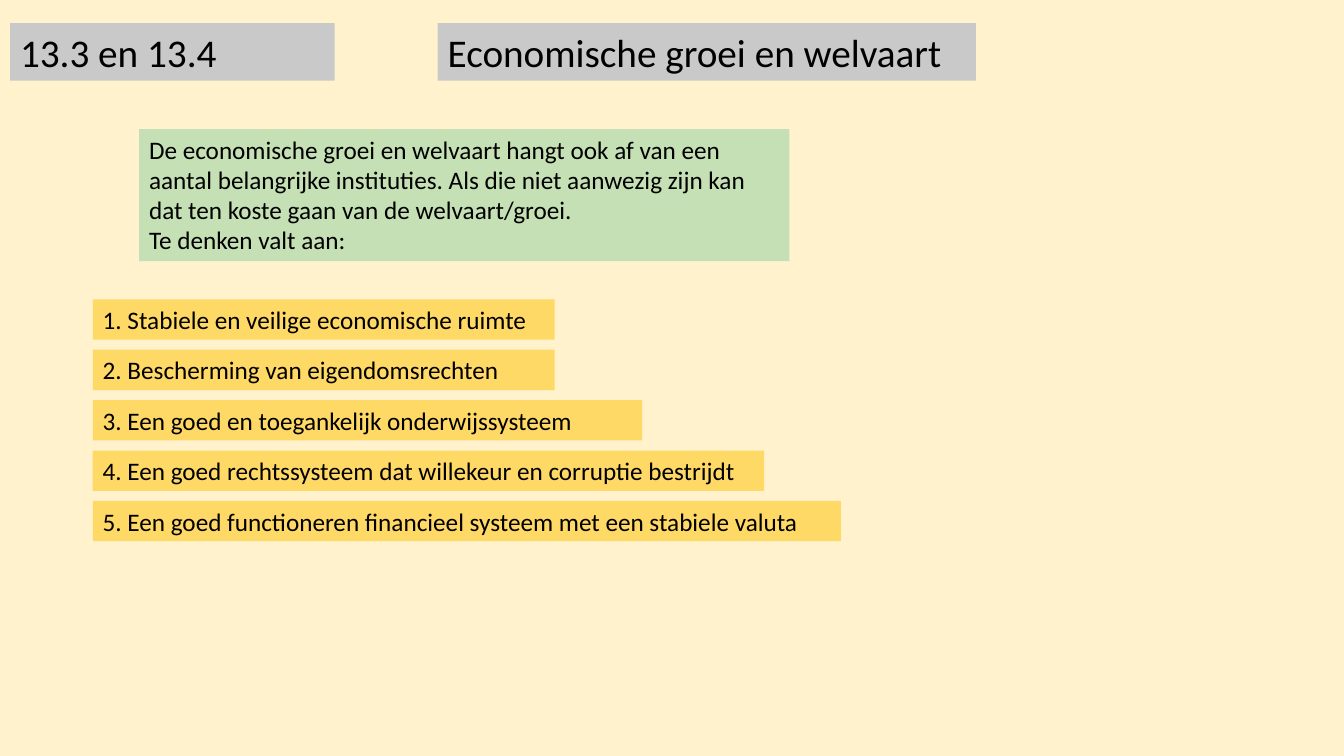
from dataclasses import dataclass

from pptx import Presentation
from pptx.dml.color import RGBColor
from pptx.enum.text import MSO_ANCHOR, MSO_AUTO_SIZE, PP_ALIGN
from pptx.util import Inches, Pt

TOP = MSO_ANCHOR.TOP
LEFT = PP_ALIGN.LEFT
NO_AUTOFIT = MSO_AUTO_SIZE.NONE
TITLE_ONLY = 5


@dataclass(frozen=True)
class Theme:
    font: str = "Calibri"
    heading_size: int = 28
    body_size: int = 18
    text: str = "000000"
    page: str = "FFF2CC"
    heading: str = "C9C9C9"
    intro: str = "C5E0B4"
    item: str = "FFD966"


theme = Theme()


def place(box, left, top, width, height):
    box.left, box.top = Inches(left), Inches(top)
    box.width, box.height = Inches(width), Inches(height)


def write(box, text, size, fill):
    box.fill.solid()
    box.fill.fore_color.rgb = RGBColor.from_string(fill)
    frame = box.text_frame
    frame.word_wrap = True
    frame.auto_size = NO_AUTOFIT
    frame.vertical_anchor = TOP
    frame.text = text
    for para in frame.paragraphs:
        para.alignment = LEFT
        para.font.name = theme.font
        para.font.size = Pt(size)
        para.font.color.rgb = RGBColor.from_string(theme.text)


# Deck and page
deck = Presentation()
deck.slide_width, deck.slide_height = Inches(13.33), Inches(7.5)
page = deck.slides.add_slide(deck.slide_layouts[TITLE_ONLY])
page.background.fill.solid()
page.background.fill.fore_color.rgb = RGBColor.from_string(theme.page)

# Title and section number
title = page.shapes.title
place(title, 4.34, 0.23, 5.34, 0.57)
write(title, "Economische groei en welvaart", theme.heading_size, theme.heading)

section = page.shapes.add_textbox(0, 0, 0, 0)
place(section, 0.1, 0.23, 3.22, 0.57)
write(section, "13.3 en 13.4", theme.heading_size, theme.heading)

# Introduction
intro = page.shapes.add_textbox(0, 0, 0, 0)
place(intro, 1.38, 1.28, 6.45, 1.31)
write(
    intro,
    "De economische groei en welvaart hangt ook af van een aantal belangrijke "
    "instituties. Als die niet aanwezig zijn kan dat ten koste gaan van de "
    "welvaart/groei.\nTe denken valt aan:",
    theme.body_size,
    theme.intro,
)

# Numbered institutions, evenly spaced, each with its own width
institutions = [
    ("Stabiele en veilige economische ruimte", 4.58),
    ("Bescherming van eigendomsrechten", 4.58),
    ("Een goed en toegankelijk onderwijssysteem", 5.45),
    ("Een goed rechtssysteem dat willekeur en corruptie bestrijdt", 6.66),
    ("Een goed functioneren financieel systeem met een stabiele valuta", 7.42),
]
first_top, row_step = 2.97, 0.5
for row, (institution, width) in enumerate(institutions):
    item = page.shapes.add_textbox(0, 0, 0, 0)
    place(item, 0.92, first_top + row * row_step, width, 0.4)
    write(item, f"{row + 1}. {institution}", theme.body_size, theme.item)

deck.save("out.pptx")
